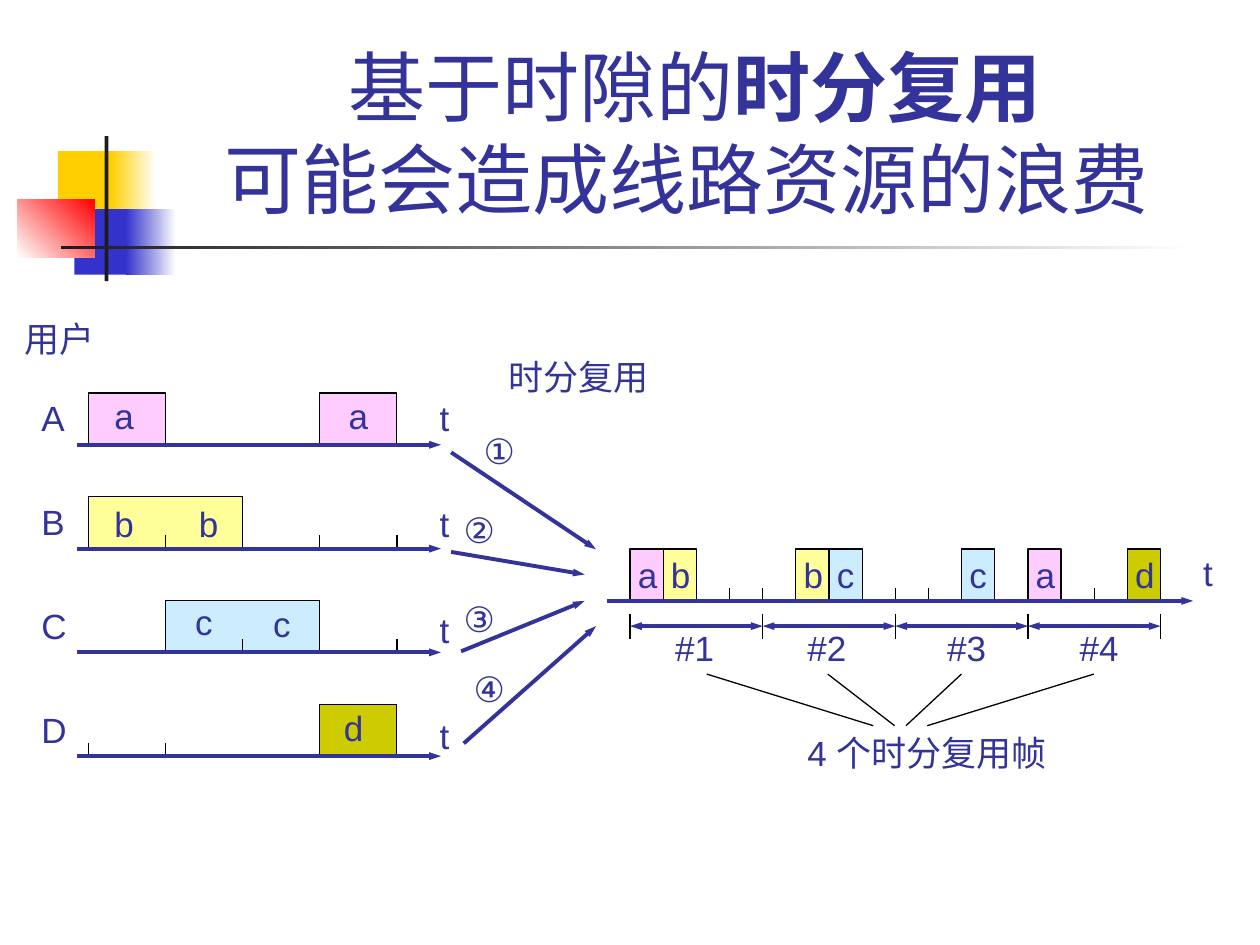
from lxml import etree
from pptx import Presentation
from pptx.dml.color import RGBColor
from pptx.enum import shapes, text
from pptx.oxml.ns import qn
from pptx.util import Pt

rgb = RGBColor.from_string
INK, BLACK, WHITE = "333399", "000000", "FFFFFF"
COLORS = {"a": "FFCCFF", "b": "FFFF99", "c": "CCECFF", "d": "CCCC00"}

prs = Presentation()
prs.slide_width, prs.slide_height = Pt(720), Pt(540)
s = prs.slides.add_slide(prs.slide_layouts[5])

# Decoration: left, top, width, height, colours (two make a gradient), angle
decor = [
    (33.1, 86.4, 34.6, 37.4, ["FFCF01"], 0),
    (63.4, 86.4, 25.9, 37.4, ["FFCF01", WHITE], 0),
    (42.5, 119.5, 33.1, 37.4, ["3333CC"], 0),
    (72, 119.5, 28.8, 37.4, ["3333CC", WHITE], 0),
    (10.1, 113.8, 43.9, 33.1, [WHITE, "FF0000"], 45),
    (59.8, 77.8, 2.2, 82.8, ["1C1C1C"], 0),
    (34.6, 140.4, 648, 2.2, ["1C1C1C", WHITE], 0),
]
for left, top, width, height, colors, angle in decor:
    sp = s.shapes.add_shape(shapes.MSO_SHAPE.RECTANGLE,
                            Pt(left), Pt(top), Pt(width), Pt(height))
    sp.shadow.inherit = False
    sp.line.fill.background()
    if len(colors) == 1:
        sp.fill.solid()
        sp.fill.fore_color.rgb = rgb(colors[0])
    else:
        sp.fill.gradient()
        sp.fill.gradient_angle = angle
        for stop, color, position in zip(sp.fill.gradient_stops, colors, (0, 1)):
            stop.color.rgb = rgb(color)
            stop.position = position

# Title
title = s.shapes.title
title.left, title.top, title.width, title.height = Pt(90.7), Pt(16.6), Pt(613.4), Pt(115.2)
tf = title.text_frame
tf.auto_size = text.MSO_AUTO_SIZE.NONE
tf.word_wrap = True
tf.vertical_anchor = text.MSO_ANCHOR.BOTTOM
p = tf.paragraphs[0]
p.alignment = text.PP_ALIGN.CENTER
for words, bold in (("基于时隙的", False), ("时分复用", True), ("可能会造成线路资源的浪费 ", False)):
    r = p.add_run()
    r.text = words
    r.font.size, r.font.name, r.font.bold = Pt(44), "Cabin", bold
    r.font.color.rgb = rgb(INK)
    if bold:
        p.add_line_break()

# Grids: four user axes on the left, one shared axis on the right
USER_X, USER_SLOT, USER_Y, ROW = 50.4, 44.1, 254.2, 59.3
LINK_X, LINK_SLOT, LINK_Y = 360, 18.95, 343.4
BOX_H, TICK_H = 29.6, 7.6
users = [  # name, first slot and slot count of each block, ticks
    ("a", [(0, 1), (3, 1)], []),
    ("b", [(0, 2)], [1, 3, 4]),
    ("c", [(1, 2)], [2, 4]),
    ("d", [(3, 1)], [0, 1, 3]),
]
link_slots = [(0, "a"), (1, "b"), (5, "b"), (6, "c"), (10, "c"), (12, "a"), (15, "d")]

blocks = []  # left, baseline, width, user
lines = []   # x1, y1, x2, y2, arrowheads
labels = [   # left, top, width, words
    (7.2, 177.8, 54.7, "用户"), (283.7, 199.4, 94.3, "时分复用"),
    (454.3, 414.7, 151.2, "4 个时分复用帧"), (680.4, 311.8, 20.2, "t"),
    (58.3, 221.8, 25.9, "a"), (192.2, 221.8, 25.9, "a"),
    (58.3, 283.7, 25.9, "b"), (106.6, 283.7, 25.9, "b"),
    (104.4, 339.8, 24.5, "c"), (149, 340.6, 24.5, "c"), (189.4, 400.3, 25.9, "d"),
    (269.3, 241.9, 34.6, "①"), (257.8, 287.3, 34.6, "②"),
    (257.8, 337.7, 34.6, "③"), (263.5, 378, 34.6, "④"),
]

for i, (user, spans, ticks) in enumerate(users):
    y = USER_Y + i * ROW
    blocks += [(USER_X + slot * USER_SLOT, y, n * USER_SLOT, user) for slot, n in spans]
    for slot in ticks:
        x = USER_X + slot * USER_SLOT
        lines.append((x, y - TICK_H, x, y, ""))
    lines.append((43.9, y, 252, y, "tail"))
    labels += [(16.6, 223.2 + i * ROW, 28.8, user.upper()),
               (244.1, 223.2 + i * 60.5, 20.2, "t")]

for slot, user in link_slots:
    x = LINK_X + slot * LINK_SLOT
    blocks.append((x, LINK_Y, LINK_SLOT, user))
    labels.append((x - 2.6, 312.5, 25.9, user))
for slot in (2, 3, 4, 8, 9, 14):
    x = LINK_X + slot * LINK_SLOT
    lines.append((x, LINK_Y - TICK_H, x, LINK_Y, ""))
lines.append((347, LINK_Y, 681.8, LINK_Y, "tail"))

# Frames: bounds, double arrows, names and leaders to the caption
FRAME_W = 4 * LINK_SLOT
leaders = [(378.7, 403.9, 499), (454.3, 473, 511.2), (534.2, 549.4, 517.7), (609.8, 625, 529.9)]
for i in range(5):
    x = LINK_X + i * FRAME_W
    lines.append((x, 350.6, x, 365, ""))
for i, (label_x, top_x, bottom_x) in enumerate(leaders):
    x = LINK_X + i * FRAME_W
    lines += [(x, 357.8, x + FRAME_W, 357.8, "head tail"),
              (top_x, 385.2, bottom_x, 414.7, "")]
    labels.append((label_x, 354.2, 36.7, f"#{i + 1}"))

# Arrows from the users to the shared link
lines += [(257.8, 258.5, 340.6, 313.9, "tail"), (257.8, 315.4, 334.1, 328.3, "tail"),
          (263.5, 372.2, 334.1, 343.4, "tail"), (265, 424.8, 340.6, 357.8, "tail")]

for left, base, width, user in blocks:
    top, right = base - BOX_H, left + width
    outline = s.shapes.build_freeform(Pt(left), Pt(base))
    outline.add_line_segments([(Pt(left), Pt(top)), (Pt(right), Pt(top)),
                               (Pt(right), Pt(base))], close=False)
    sp = outline.convert_to_shape()
    sp.shadow.inherit = False
    sp.fill.solid()
    sp.fill.fore_color.rgb = rgb(COLORS[user])
    sp.line.color.rgb = rgb(BLACK)
    sp.line.width = Pt(0.75)

for x1, y1, x2, y2, heads in lines:
    sp = s.shapes.add_connector(shapes.MSO_CONNECTOR.STRAIGHT, Pt(x1), Pt(y1), Pt(x2), Pt(y2))
    sp.line.color.rgb = rgb(INK if heads else BLACK)
    sp.line.width = Pt(2.25 if heads else 0.75)
    props = sp._element.spPr
    for end in heads.split():
        etree.SubElement(props.find(qn("a:ln")), qn(f"a:{end}End"),
                         type="triangle", w="sm", len="med")
    etree.SubElement(props, qn("a:effectLst"))

for left, top, width, words in labels:
    sp = s.shapes.add_textbox(Pt(left), Pt(top), Pt(width), Pt(31))
    tf = sp.text_frame
    tf.word_wrap = words.startswith("4")
    tf.auto_size = text.MSO_AUTO_SIZE.SHAPE_TO_FIT_TEXT
    tf.text = words
    r = tf.paragraphs[0].runs[0]
    r.font.size, r.font.name = Pt(20), "Arial"
    r.font.color.rgb = rgb(INK)

prs.save("out.pptx")
